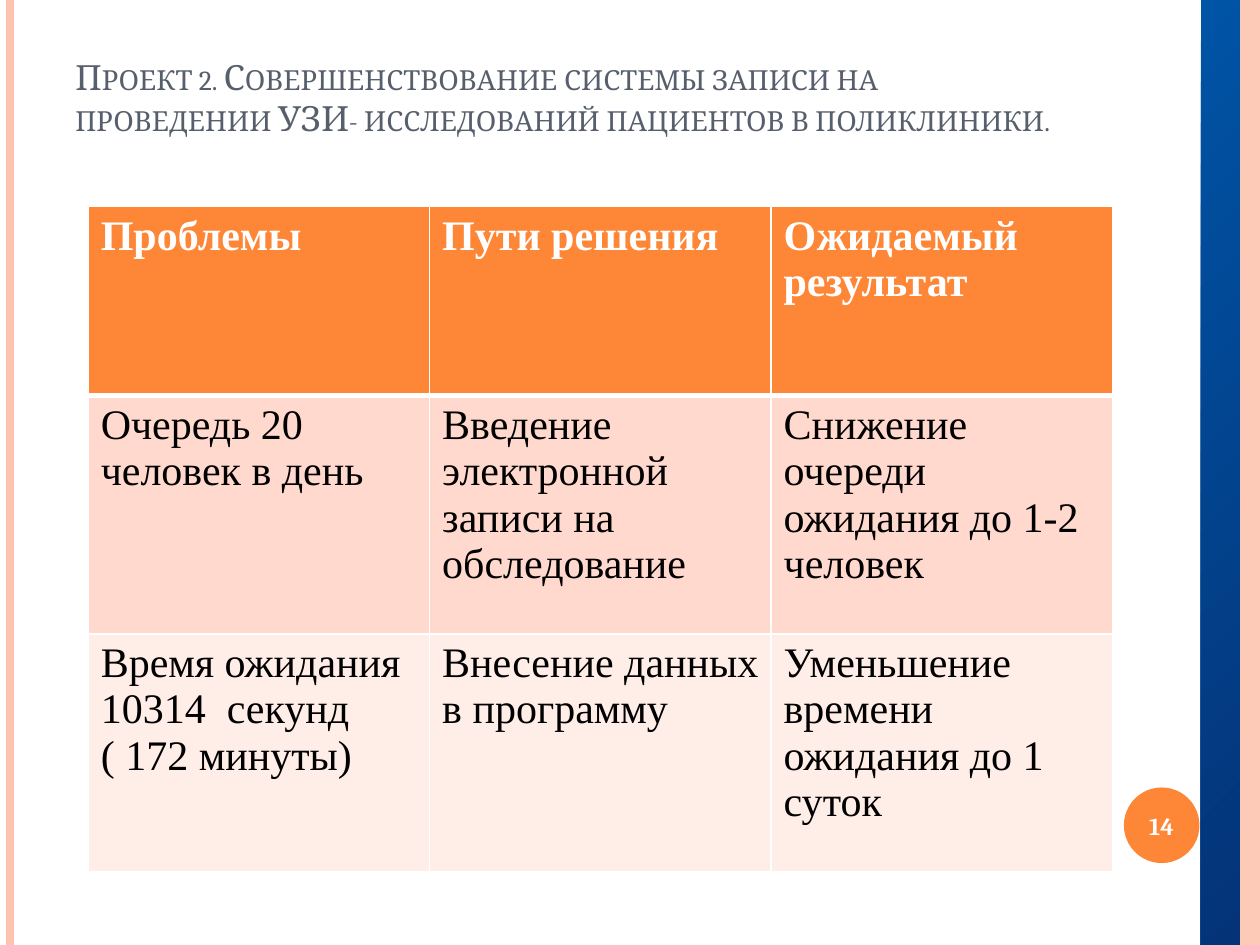
from lxml import etree
from pptx import Presentation
from pptx import util as u
from pptx.dml import color
from pptx.enum import shapes, text
from pptx.oxml import ns

Inches, Pt = u.Inches, u.Pt
COLORS = {
    "orange": "FE8637", "peach": "FEC3AE", "blue": "0054A6", "navy": "043377",
    "slate": "575F6D", "white": "FFFFFF", "black": "000000",
    "band_dark": "FFD9CE", "band_light": "FFEDE8",
}
TITLE = ("Проект 2. Совершенствование системы записи на проведении "
         "УЗИ- исследований пациентов в поликлиники.")
ROWS = [
    ["Проблемы", "Пути решения", "Ожидаемый результат"],
    ["Очередь 20 человек в день", "Введение электронной записи на обследование",
     "Снижение очереди ожидания до 1-2 человек"],
    ["Время ожидания 10314  секунд ( 172 минуты)", "Внесение данных в программу",
     "Уменьшение времени ожидания до 1 суток"],
]


def rgb(name):
    """Return the named colour."""
    return color.RGBColor.from_string(COLORS[name])


def set_alpha(shape, percent):
    """Make the colour of a shape's fill or line partly transparent."""
    element = next(shape._element.spPr.iter(ns.qn("a:srgbClr")))
    etree.SubElement(element, ns.qn("a:alpha"), val=str(percent * 1000))


def style_text(paragraph, font_name, size, color_name, bold=False):
    """Format every run of a paragraph."""
    for run in paragraph.runs:
        run.font.name, run.font.size, run.font.bold = font_name, Pt(size), bold
        run.font.color.rgb = rgb(color_name)


def add_stripe(slide, x, height, color_name, width):
    """Add a full-height vertical line."""
    line = slide.shapes.add_connector(
        shapes.MSO_CONNECTOR.STRAIGHT, Inches(x), 0, Inches(x), Inches(height))
    line.line.color.rgb = rgb(color_name)
    line.line.width = Pt(width)
    etree.SubElement(line._element.spPr, ns.qn("a:effectLst"))
    return line


def add_block(slide, kind, left, top, width, height, color_name):
    """Add a filled shape without outline or shadow."""
    shape = slide.shapes.add_shape(
        kind, Inches(left), Inches(top), Inches(width), Inches(height))
    shape.shadow.inherit = False
    shape.line.fill.background()
    shape.fill.solid()
    shape.fill.fore_color.rgb = rgb(color_name)
    return shape


def add_frame(slide, height):
    """Add the decorative stripes along both sides of the slide."""
    rectangle = shapes.MSO_SHAPE.RECTANGLE
    set_alpha(add_stripe(slide, 9.58, height, "peach", 3), 93)
    add_stripe(slide, 0.08, height, "peach", 4.5)
    add_stripe(slide, 9.83, height, "orange", 1.5)
    set_alpha(add_block(slide, rectangle, 9.67, 0, 0.33, height, "peach"), 87)
    add_stripe(slide, 9.75, height, "orange", 0.75)
    band = add_block(slide, rectangle, 9.53, 0, 0.31, height, "blue")
    band.fill.gradient()
    band.fill.gradient_angle = 315
    for stop, position, name in zip(band.fill.gradient_stops, (0, 1), ("blue", "navy")):
        stop.position = position
        stop.color.rgb = rgb(name)


def add_title(slide, left, top, width, height):
    """Add the small-caps title."""
    box = slide.shapes.add_textbox(Inches(left), Inches(top), Inches(width), Inches(height))
    frame = box.text_frame
    frame.word_wrap = True
    frame.vertical_anchor = text.MSO_ANCHOR.BOTTOM
    frame.margin_bottom = Inches(0.45)
    frame.text = TITLE
    style_text(frame.paragraphs[0], "Cambria", 19.8, "slate")
    frame.paragraphs[0].runs[0].font._element.set("cap", "small")


def add_page_number(slide, left, top, size):
    """Add the round badge with the slide number."""
    badge = add_block(slide, shapes.MSO_SHAPE.OVAL, left, top, size, size, "orange")
    frame = badge.text_frame
    frame.margin_left = frame.margin_right = 0
    frame.vertical_anchor = text.MSO_ANCHOR.MIDDLE
    frame.text = "14"
    frame.paragraphs[0].alignment = text.PP_ALIGN.CENTER
    style_text(frame.paragraphs[0], "Cambria", 14, "white", True)


def set_borders(cell, widths):
    """Draw white borders of the given widths around a cell."""
    properties = cell._tc.get_or_add_tcPr()
    for index, (side, width) in enumerate(widths.items()):
        border = etree.Element(ns.qn(f"a:{side}"), w=str(Pt(width)))
        fill = etree.SubElement(border, ns.qn("a:solidFill"))
        etree.SubElement(fill, ns.qn("a:srgbClr"), val=COLORS["white"])
        properties.insert(index, border)


def add_plan_table(slide, left, top, width, row_heights):
    """Add the table of problems, solutions and expected results."""
    table = slide.shapes.add_table(
        len(ROWS), len(ROWS[0]), Inches(left), Inches(top),
        Inches(width), Inches(sum(row_heights))).table
    fills = ["orange", "band_dark", "band_light"]
    for i, (values, height, fill) in enumerate(zip(ROWS, row_heights, fills)):
        header = i == 0
        table.rows[i].height = Inches(height)
        for j, value in enumerate(values):
            cell = table.cell(i, j)
            cell.text = value
            cell.fill.solid()
            cell.fill.fore_color.rgb = rgb(fill)
            paragraph = cell.text_frame.paragraphs[0]
            paragraph.alignment = text.PP_ALIGN.LEFT
            style_text(paragraph, "Times New Roman", 24,
                       "white" if header else "black", header)
            set_borders(cell, {"lnL": 1, "lnR": 1, "lnT": 3 if i == 1 else 1,
                               "lnB": 3 if header else 1})


def main():
    """Build and save the slide."""
    presentation = Presentation()
    presentation.slide_width, presentation.slide_height = Inches(10), Inches(7.5)
    slide = presentation.slides.add_slide(presentation.slide_layouts[6])
    add_frame(slide, 7.5)
    add_title(slide, 0.5, 0.3, 8.17, 1.25)
    add_page_number(slide, 8.92, 6.25, 0.6)
    add_plan_table(slide, 0.7, 1.64, 8.13, [1.5, 1.89, 1.89])
    presentation.save("out.pptx")


if __name__ == "__main__":
    main()
